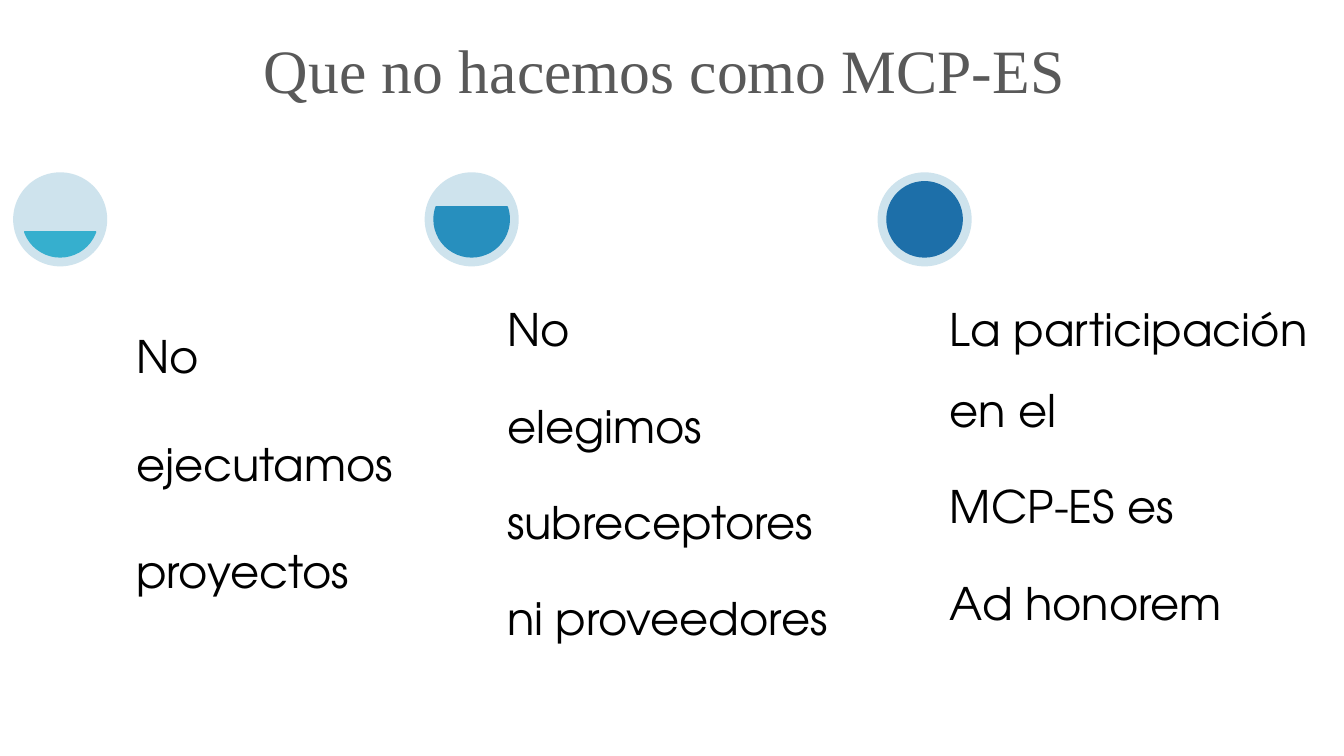
from dataclasses import dataclass
from math import asin, degrees

from pptx import Presentation
from pptx.dml.color import RGBColor
from pptx.enum.shapes import MSO_SHAPE as Preset
from pptx.enum.text import MSO_ANCHOR as Anchor, MSO_AUTO_SIZE as AutoSize, PP_ALIGN as Align
from pptx.util import Inches, Pt


@dataclass(frozen=True)
class Theme:
    title_font: str = "Times New Roman"
    body_font: str = "TeX Gyre Adventor"
    title_size: float = 44
    body_size: float = 32
    paragraph_gap: float = 0.35
    title_color: str = "595959"
    body_color: str = "000000"
    ring: str = "CEE3ED"
    levels: tuple = ("36AFCE", "278FBE", "1D6FA9")


def apply_format(target, values):
    for name, value in values.items():
        setattr(target, name, value)


class SlideBuilder:
    """Places elements by percentages of the slide's width and height."""

    def __init__(self, deck, theme):
        self.deck, self.theme = deck, theme
        self.slide = deck.slides.add_slide(deck.slide_layouts[5])

    def across(self, percent):
        return round(self.deck.slide_width * percent / 100)

    def down(self, percent):
        return round(self.deck.slide_height * percent / 100)

    def fill_paragraph(self, paragraph, text, font, size, color, **layout):
        run = paragraph.add_run()
        run.text = text
        apply_format(run.font, {"name": font, "size": Pt(size)})
        run.font.color.rgb = RGBColor.from_string(color)
        apply_format(paragraph, layout)

    def title(self, text, left, top, width, height):
        heading = self.slide.shapes.title
        apply_format(heading, {"left": self.across(left), "top": self.down(top),
                               "width": self.across(width), "height": self.down(height)})
        apply_format(heading.text_frame, {"word_wrap": True, "auto_size": AutoSize.NONE,
                                          "vertical_anchor": Anchor.MIDDLE})
        style = self.theme
        self.fill_paragraph(heading.text_frame.paragraphs[0], text, style.title_font,
                            style.title_size, style.title_color,
                            alignment=Align.CENTER, line_spacing=0.9)

    def disc(self, preset, left, top, diameter, color):
        disc = self.slide.shapes.add_shape(preset, left, top, diameter, diameter)
        disc.shadow.inherit = False
        disc.fill.solid()
        disc.fill.fore_color.rgb = RGBColor.from_string(color)
        disc.line.fill.background()
        return disc

    def gauge(self, left, top, diameter, level, color):
        """Draws a ring whose inner disc is filled from the bottom up to level (0 to 1)."""
        x, y, size = self.across(left), self.down(top), self.across(diameter)
        inset = size // 10
        self.disc(Preset.OVAL, x, y, size, self.theme.ring)
        filling = self.disc(Preset.CHORD, x + inset, y + inset, size - 2 * inset, color)
        filling.line.color.rgb = RGBColor.from_string(color)
        filling.line.width = Pt(1)
        surface = degrees(asin(1 - 2 * level))
        units_per_degree = 0.6
        filling.adjustments[0] = surface % 360 * units_per_degree
        filling.adjustments[1] = (180 - surface) * units_per_degree

    def statement(self, lines, left, top, width, height, spacing):
        frame = self.slide.shapes.add_textbox(
            self.across(left), self.down(top), self.across(width), self.down(height)).text_frame
        margins = dict.fromkeys(
            ("margin_left", "margin_top", "margin_right", "margin_bottom"), Inches(0.09))
        apply_format(frame, {"word_wrap": True, "vertical_anchor": Anchor.TOP, **margins})
        style = self.theme
        for index, line in enumerate(lines):
            paragraph = frame.add_paragraph() if index else frame.paragraphs[0]
            self.fill_paragraph(paragraph, line, style.body_font, style.body_size,
                                style.body_color, line_spacing=spacing, alignment=Align.LEFT,
                                space_after=Pt(style.body_size * style.paragraph_gap))


def main():
    deck = Presentation()
    deck.slide_width, deck.slide_height = Inches(13.33), Inches(7.5)
    theme = Theme()
    builder = SlideBuilder(deck, theme)
    builder.title("Que no hacemos como MCP-ES ", 6.9, 0, 86.25, 19.33)

    # gauge left, text left, text width, line spacing, lines
    limits = [
        (0.98, 9.45, 20.7, 2.0, ["No ejecutamos proyectos"]),
        (31.6, 37.06, 26.8, 1.5, ["No", "elegimos", "subreceptores", "ni proveedores"]),
        (65.3, 70, 28.36, 1.5, ["La participación en el", "MCP-ES es", "Ad honorem"]),
    ]
    for step, (limit, color) in enumerate(zip(limits, theme.levels), start=1):
        gauge_left, text_left, text_width, spacing, lines = limit
        builder.gauge(gauge_left, 22.8, 7, step / len(limits), color)
        builder.statement(lines, text_left, 35.2, text_width, 52.4, spacing)

    deck.save("out.pptx")


if __name__ == "__main__":
    main()
